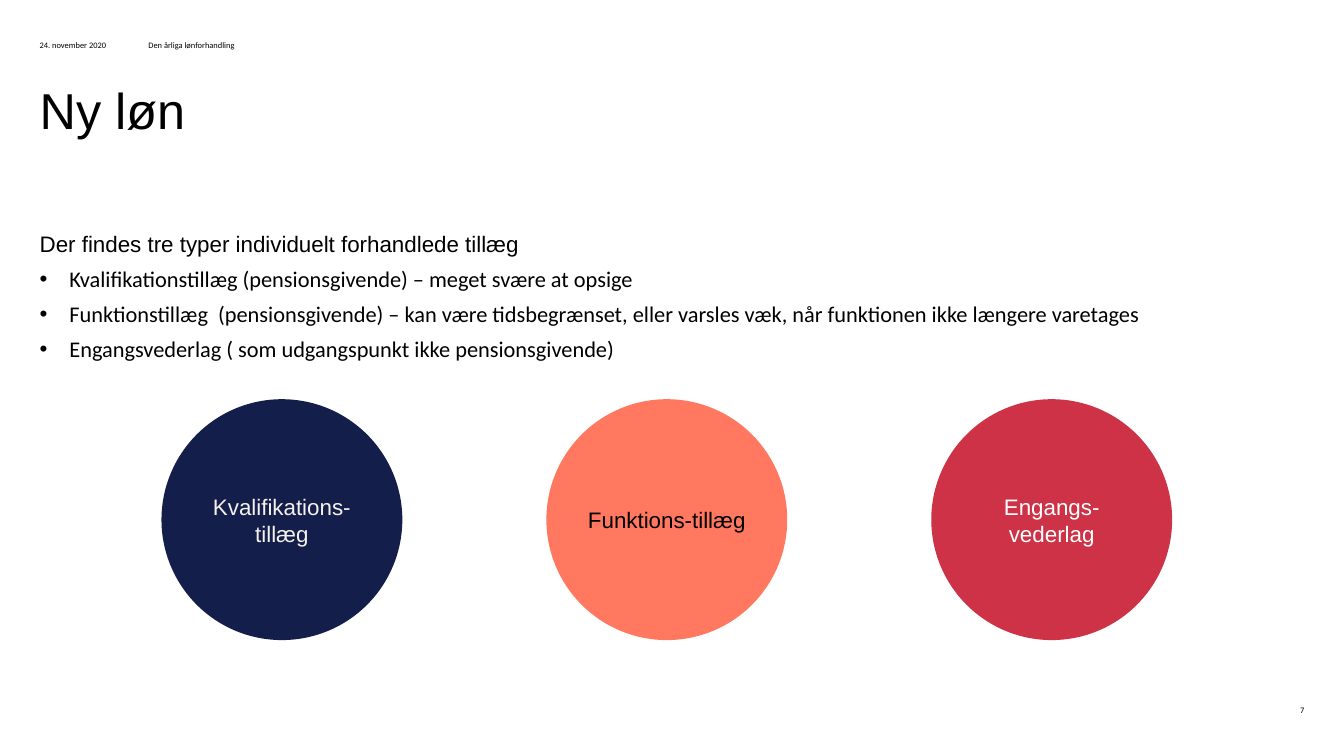
from lxml.etree import SubElement
from pptx import Presentation
from pptx.dml.color import RGBColor
from pptx.enum.shapes import MSO_SHAPE as Shape
from pptx.enum.text import MSO_ANCHOR as Anchor, MSO_AUTO_SIZE as AutoSize, PP_ALIGN as Align
from pptx.oxml.ns import qn
from pptx.util import Cm, Pt

COLORS = {
    "black": "000000",
    "white": "FFFFFF",
    "cream": "F5F0EB",
    "navy": "141E4B",
    "coral": "FF785F",
    "red": "CD3246",
}
MARGIN, CONTENT_WIDTH = 1, 31.87
CIRCLE_LEFT, CIRCLE_TOP, CIRCLE_SIZE, CIRCLE_STEP = 4.07, 10.06, 6.07, 9.7

INTRO = "Der findes tre typer individuelt forhandlede tillæg"
BULLETS = [
    "Kvalifikationstillæg (pensionsgivende) – meget svære at opsige",
    "Funktionstillæg  (pensionsgivende) – kan være tidsbegrænset, eller varsles væk, "
    "når funktionen ikke længere varetages",
    "Engangsvederlag ( som udgangspunkt ikke pensionsgivende)",
]
CIRCLES = [
    ("Kvalifikations-tillæg", "navy", "cream"),
    ("Funktions-tillæg", "coral", "black"),
    ("Engangs-vederlag", "red", "white"),
]
# Text, left, top, width, alignment
SMALL_TEXTS = [
    ("24. november 2020", MARGIN, 1, 2.74, Align.LEFT),
    ("Den årliga lønforhandling", 3.74, 1, 4.47, Align.LEFT),
    ("7", 31.9, 17.75, 0.97, Align.RIGHT),
]


def rgb(name):
    return RGBColor.from_string(COLORS[name])


def place(shape, left, top, width, height):
    shape.left, shape.top = Cm(left), Cm(top)
    shape.width, shape.height = Cm(width), Cm(height)


def prepare_frame(shape, anchor):
    frame = shape.text_frame
    frame.margin_left = frame.margin_right = frame.margin_top = frame.margin_bottom = 0
    frame.word_wrap = True
    frame.auto_size = AutoSize.NONE
    frame.vertical_anchor = anchor
    return frame


def add_text(paragraph, text, size, font="Arial", color="black", align=Align.LEFT):
    paragraph.alignment = align
    run = paragraph.add_run()
    run.text = text
    run.font.name = font
    run.font.size = Pt(size)
    run.font.color.rgb = rgb(color)


def set_bullet(paragraph, character=None):
    properties = paragraph._p.get_or_add_pPr()
    indent = Cm(0.75) if character else 0
    properties.set("marL", str(indent))
    properties.set("indent", str(-indent))
    if character:
        SubElement(properties, qn("a:buFont"), typeface="Arial")
        SubElement(properties, qn("a:buChar"), char=character)
    else:
        SubElement(properties, qn("a:buNone"))


def fill_title(title):
    place(title, MARGIN, 2.24, CONTENT_WIDTH, 3.55)
    paragraph = prepare_frame(title, Anchor.TOP).paragraphs[0]
    paragraph.line_spacing = 0.83
    add_text(paragraph, "Ny løn", 36)


def fill_body(body):
    place(body, MARGIN, 5.79, CONTENT_WIDTH, 11.25)
    frame = prepare_frame(body, Anchor.TOP)
    for index, text in enumerate([INTRO, *BULLETS]):
        paragraph = frame.add_paragraph() if index else frame.paragraphs[0]
        set_bullet(paragraph, "•" if index else None)
        paragraph.space_before, paragraph.space_after = Pt(0), Pt(6)
        add_text(paragraph, text, 16, "Calibri" if index else "Arial")


def add_small_text(slide, text, left, top, width, align):
    box = slide.shapes.add_textbox(Cm(left), Cm(top), Cm(width), Cm(0.3))
    frame = prepare_frame(box, Anchor.MIDDLE)
    add_text(frame.paragraphs[0], text, 6, "Calibri", align=align)


def add_circle(slide, left, text, fill, color):
    circle = slide.shapes.add_shape(
        Shape.OVAL, Cm(left), Cm(CIRCLE_TOP), Cm(CIRCLE_SIZE), Cm(CIRCLE_SIZE))
    circle.shadow.inherit = False
    circle.fill.solid()
    circle.fill.fore_color.rgb = rgb(fill)
    circle.line.fill.background()
    frame = prepare_frame(circle, Anchor.MIDDLE)
    add_text(frame.paragraphs[0], text, 16, color=color, align=Align.CENTER)


def main():
    presentation = Presentation()
    presentation.slide_width, presentation.slide_height = Cm(33.87), Cm(19.05)
    slide = presentation.slides.add_slide(presentation.slide_layouts[1])

    # Title and list
    fill_title(slide.shapes.title)
    fill_body(slide.placeholders[1])

    # Date, footer and page number
    for small_text in SMALL_TEXTS:
        add_small_text(slide, *small_text)

    # Three kinds of supplement
    for index, circle in enumerate(CIRCLES):
        add_circle(slide, CIRCLE_LEFT + index * CIRCLE_STEP, *circle)

    presentation.save("out.pptx")


if __name__ == "__main__":
    main()
